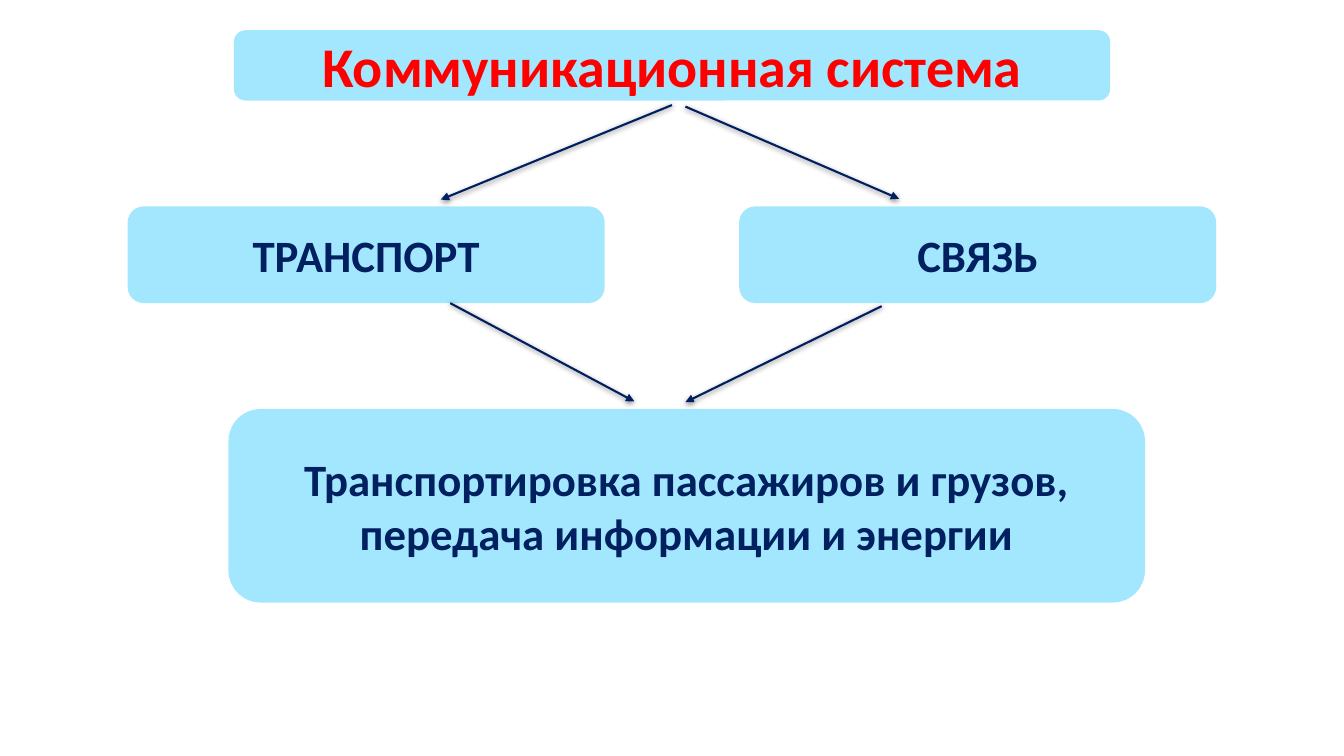
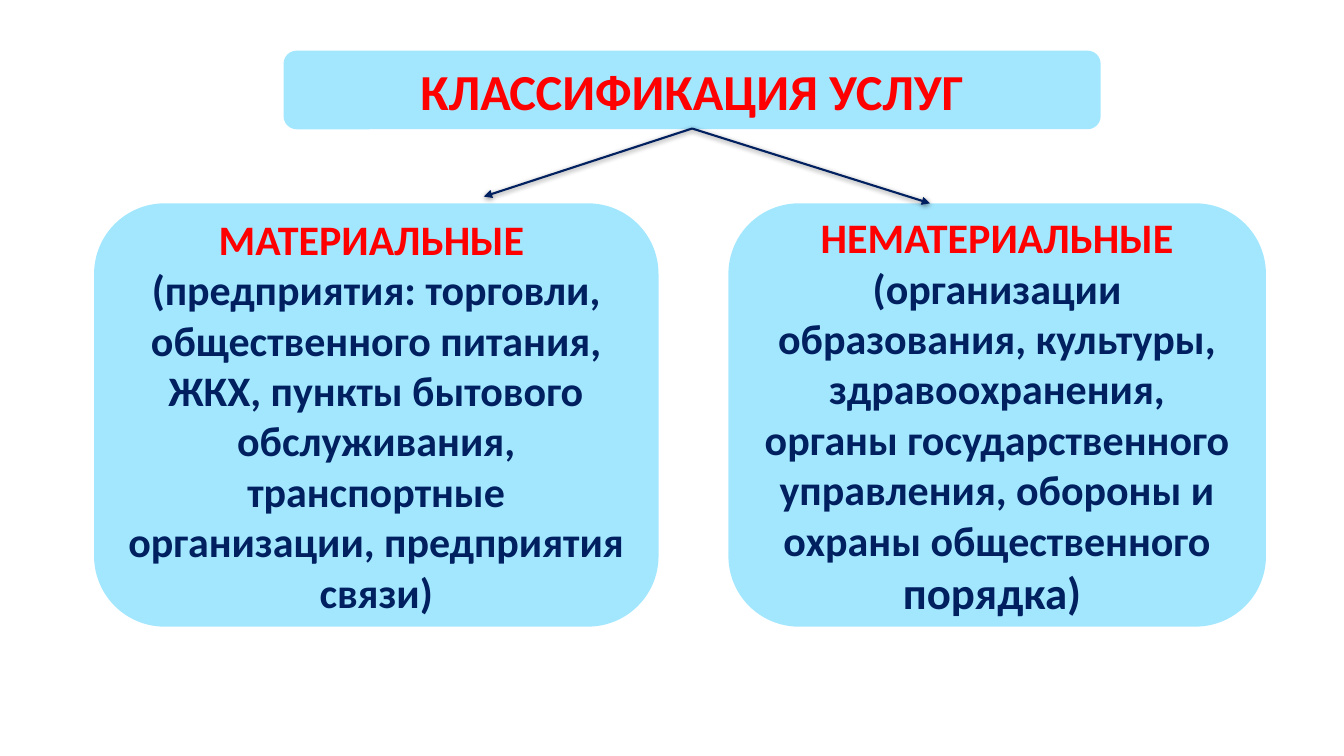
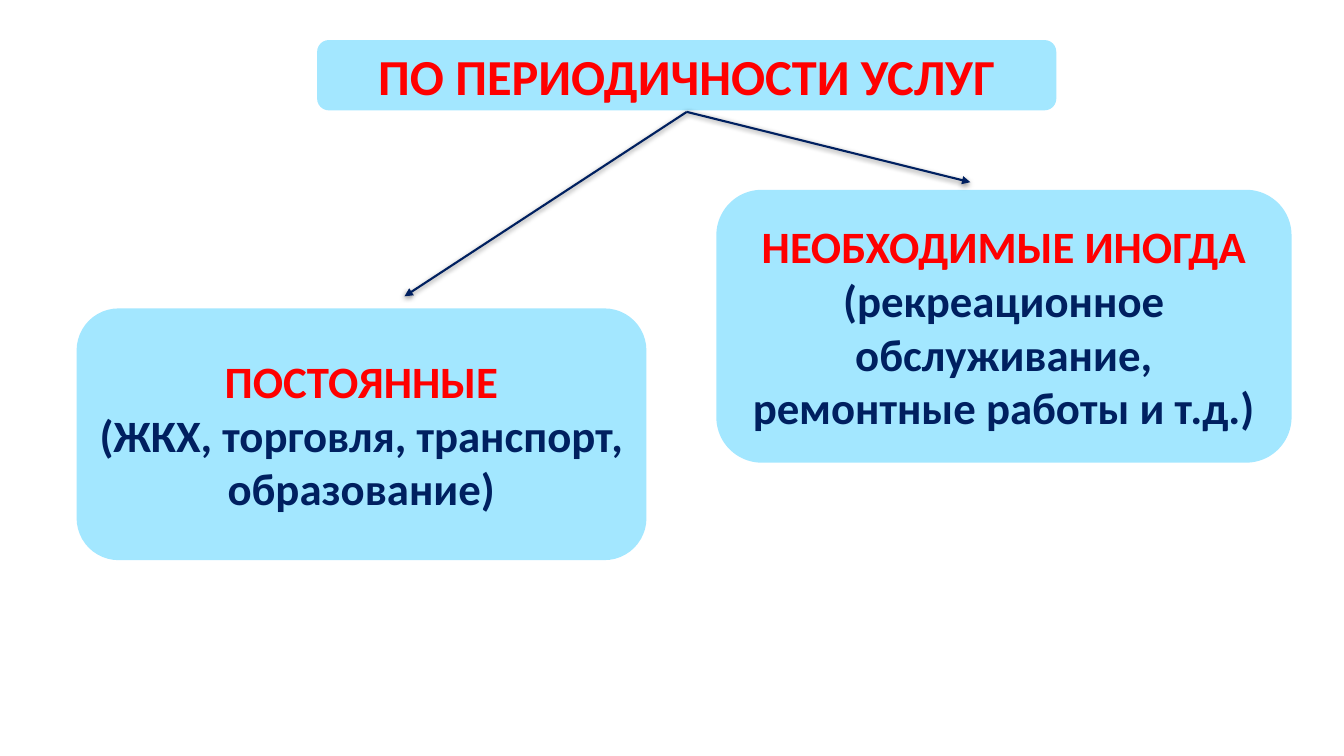
from pptx import Presentation
from pptx.dml.color import RGBColor
from pptx.enum.shapes import MSO_CONNECTOR, MSO_SHAPE
from pptx.enum.text import MSO_ANCHOR, MSO_AUTO_SIZE, PP_ALIGN
from pptx.oxml import parse_xml
from pptx.util import Inches, Pt

ROUNDED = MSO_SHAPE.ROUNDED_RECTANGLE
STRAIGHT = MSO_CONNECTOR.STRAIGHT
MIDDLE = MSO_ANCHOR.MIDDLE
NO_FIT = MSO_AUTO_SIZE.NONE
CENTER = PP_ALIGN.CENTER

SKY = RGBColor(0xA3, 0xE7, 0xFF)
RED = RGBColor(0xFF, 0x00, 0x00)
NAVY = RGBColor(0x00, 0x20, 0x60)

FRAME = {"word_wrap": True, "auto_size": NO_FIT, "vertical_anchor": MIDDLE}
FONT = {"name": "Calibri", "bold": True}

NS = 'xmlns:a="http://schemas.openxmlformats.org/drawingml/2006/main"'
ARROWHEAD = f'<a:tailEnd {NS} type="triangle"/>'
SHADOW = (
    f'<a:effectLst {NS}><a:outerShdw blurRad="50800" dist="12700" dir="5400000" '
    'rotWithShape="0"><a:srgbClr val="000000"><a:alpha val="50000"/></a:srgbClr>'
    '</a:outerShdw></a:effectLst>'
)

prs = Presentation()
prs.slide_width = Inches(13.333)
prs.slide_height = Inches(7.5)
TITLE_ONLY = prs.slide_layouts[5]


def place(*shares):
    sides = (prs.slide_width, prs.slide_height) * 2
    return [round(side * share / 100) for side, share in zip(sides, shares)]


def write(sp, paragraphs):
    tf = sp.text_frame
    for key, value in FRAME.items():
        setattr(tf, key, value)
    for i, runs in enumerate(paragraphs):
        p = tf.add_paragraph() if i else tf.paragraphs[0]
        p.alignment = CENTER
        for text, size, color in runs:
            r = p.add_run()
            r.text = text
            for key, value in FONT.items():
                setattr(r.font, key, value)
            r.font.size = Pt(size)
            r.font.color.rgb = color


SLIDES = [
    {
        "title": ("Коммуникационная система", 40, (17.4, 4, 65.2, 9.3)),
        "boxes": [
            ((9.5, 27.3, 35.5, 12.8), [[("ТРАНСПОРТ", 32, NAVY)]]),
            ((55, 27.3, 35.5, 12.8), [[("СВЯЗЬ", 32, NAVY)]]),
            ((17, 54.1, 68.2, 25.6), [
                [("Транспортировка пассажиров и грузов, "
                  "передача информации и энергии", 32, NAVY)],
            ]),
        ],
        "arrows": [
            (50, 13.9, 32.8, 26.4),
            (51, 14.1, 66.9, 26.3),
            (33.5, 40.1, 47.2, 53.1),
            (65.6, 40.5, 51, 53.2),
        ],
    },
    {
        "title": ("КЛАССИФИКАЦИЯ УСЛУГ", 36, (21.1, 6.7, 60.8, 10.4)),
        "boxes": [
            ((7, 26.9, 42, 56), [
                [("МАТЕРИАЛЬНЫЕ ", 30, RED)],
                [("(предприятия: торговли, общественного питания, ЖКХ, "
                  "пункты бытового обслуживания, транспортные организации, "
                  "предприятия связи)", 30, NAVY)],
            ]),
            ((54.2, 26.9, 40, 56), [
                [("НЕМАТЕРИАЛЬНЫЕ", 30, RED)],
                [("(организации образования, культуры, здравоохранения, "
                  "органы государственного управления, обороны и охраны "
                  "общественного ", 30, NAVY), ("порядка) ", 32, NAVY)],
            ]),
        ],
        "arrows": [(51.5, 17, 36, 26), (51.5, 17, 69.2, 26.9)],
    },
    {
        "title": ("ПО ПЕРИОДИЧНОСТИ УСЛУГ", 36, (23.6, 5.3, 55, 9.3)),
        "boxes": [
            ((5.7, 40.8, 42.4, 33.3), [
                [("ПОСТОЯННЫЕ", 32, RED)],
                [("(ЖКХ, торговля, транспорт, образование)", 32, NAVY)],
            ]),
            ((53.3, 25.1, 42.8, 36.1), [
                [("НЕОБХОДИМЫЕ ИНОГДА", 32, RED)],
                [("(рекреационное обслуживание, ремонтные работы и т.д.)",
                  32, NAVY)],
            ]),
        ],
        "arrows": [(51.1, 14.8, 30.1, 39.2), (51.1, 14.8, 72.2, 24.1)],
    },
]

for content in SLIDES:
    s = prs.slides.add_slide(TITLE_ONLY)
    text, size, area = content["title"]
    title = s.shapes.title
    title.left, title.top, title.width, title.height = place(*area)
    write(title, [[(text, size, RED)]])

    for area, paragraphs in [(area, [])] + content["boxes"]:
        sp = s.shapes.add_shape(ROUNDED, *place(*area))
        sp.shadow.inherit = False
        sp.fill.solid()
        sp.fill.fore_color.rgb = SKY
        sp.line.fill.background()
        write(sp, paragraphs)
        if not paragraphs:
            title.element.addprevious(sp.element)

    for ends in content["arrows"]:
        arrow = s.shapes.add_connector(STRAIGHT, *place(*ends))
        arrow.line.color.rgb = NAVY
        arrow.line.width = Pt(1.5)
        arrow.line.fill
        spPr = arrow.element.spPr
        spPr.ln.append(parse_xml(ARROWHEAD))
        spPr.append(parse_xml(SHADOW))

prs.save("out.pptx")
